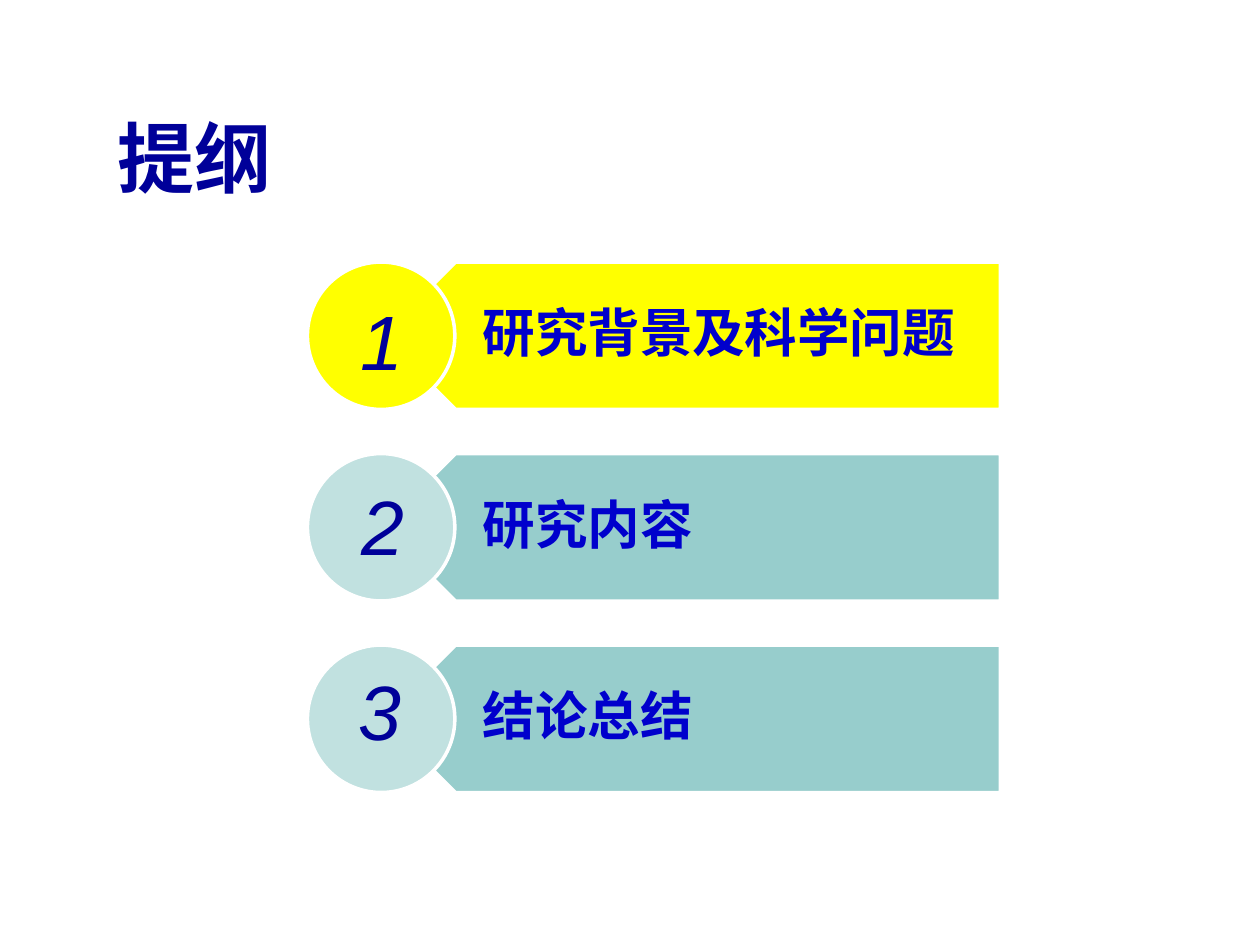
from dataclasses import dataclass

from lxml import etree
from pptx import Presentation
from pptx import util as u
from pptx.dml.color import RGBColor
from pptx.enum import shapes, text
from pptx.oxml.ns import qn


@dataclass(frozen=True)
class Theme:
    chinese: str = "Noto Sans CJK SC"
    latin: str = "Arial"
    navy: str = "000099"
    blue: str = "0000CC"
    white: str = "FFFFFF"
    yellow: str = "FFFF00"
    teal: str = "97CDCC"
    pale_teal: str = "C1E1E0"
    large: int = 44
    label: int = 30
    outline: int = 2


def write_text(frame, content, *, font, size, color, bold=False, italic=False,
               anchor=text.MSO_ANCHOR.TOP, line_spacing=None, insets=None):
    """Fill a text frame with one formatted, left-aligned paragraph."""
    frame.word_wrap = True
    frame.auto_size = text.MSO_AUTO_SIZE.NONE
    frame.vertical_anchor = anchor
    if insets:
        (frame.margin_left, frame.margin_top,
         frame.margin_right, frame.margin_bottom) = map(u.Inches, insets)
    para = frame.paragraphs[0]
    para.alignment = text.PP_ALIGN.LEFT
    if line_spacing:
        para.line_spacing = line_spacing
    span = para.add_run()
    span.text = content
    span.font.size = u.Pt(size)
    span.font.bold = bold
    span.font.italic = italic
    span.font.color.rgb = RGBColor.from_string(color)
    span.font.name = font
    # East Asian characters take their typeface from a separate element
    east_asian = etree.SubElement(span.font._element, qn("a:ea"))
    east_asian.set("typeface", font)


class OutlineSlide:
    def __init__(self, deck, theme):
        self.theme = theme
        self.slide = deck.slides.add_slide(deck.slide_layouts[5])

    def title(self, content, left, top, width, height):
        box = self.slide.shapes.title
        box.left, box.top, box.width, box.height = map(
            u.Inches, (left, top, width, height))
        write_text(box.text_frame, content, font=self.theme.chinese,
                   size=self.theme.large, color=self.theme.navy, bold=True,
                   anchor=text.MSO_ANCHOR.BOTTOM)

    def shape(self, kind, fill, left, top, width, height, rotation=0):
        shape = self.slide.shapes.add_shape(
            kind, *map(u.Inches, (left, top, width, height)))
        shape.rotation = rotation
        shape.shadow.inherit = False
        shape.fill.solid()
        shape.fill.fore_color.rgb = RGBColor.from_string(fill)
        shape.line.color.rgb = RGBColor.from_string(self.theme.white)
        shape.line.width = u.Pt(self.theme.outline)

    def text_box(self, content, left, top, width, height, **style):
        box = self.slide.shapes.add_textbox(
            *map(u.Inches, (left, top, width, height)))
        write_text(box.text_frame, content, **style)

    def section(self, index, label, number_left, bar_fill, circle_fill):
        theme = self.theme
        size = 1.17
        top = 2.08 + index * 1.52
        # Bar pointing left, its label, and the circle over its tip
        self.shape(shapes.MSO_SHAPE.PENTAGON, bar_fill,
                   3.03, top, 4.91, size, rotation=180)
        self.text_box(label, 3.32, top, 4.62, size, font=theme.chinese,
                      size=theme.label, color=theme.blue, bold=True,
                      anchor=text.MSO_ANCHOR.MIDDLE, line_spacing=0.9,
                      insets=(0.51, 0.12, 0.23, 0.12))
        self.shape(shapes.MSO_SHAPE.OVAL, circle_fill, 2.44, top, size, size)
        # Section number, spaced slightly tighter than the bars
        self.text_box(str(index + 1), number_left, 2.28 + index * 1.47,
                      0.65, 0.84, font=theme.latin, size=theme.large,
                      color=theme.navy, italic=True)


def main():
    deck = Presentation()
    deck.slide_width, deck.slide_height = u.Inches(10), u.Inches(7.5)
    theme = Theme()
    outline = OutlineSlide(deck, theme)
    outline.title("提纲", 0.83, 0.41, 8.42, 1.25)

    # The current section is highlighted in yellow
    sections = [("研究背景及科学问题", 2.76), ("研究内容", 2.77), ("结论总结", 2.75)]
    current = 0
    for index, (label, number_left) in enumerate(sections):
        fills = ((theme.yellow, theme.yellow) if index == current
                 else (theme.teal, theme.pale_teal))
        outline.section(index, label, number_left, *fills)

    deck.save("out.pptx")


if __name__ == "__main__":
    main()
